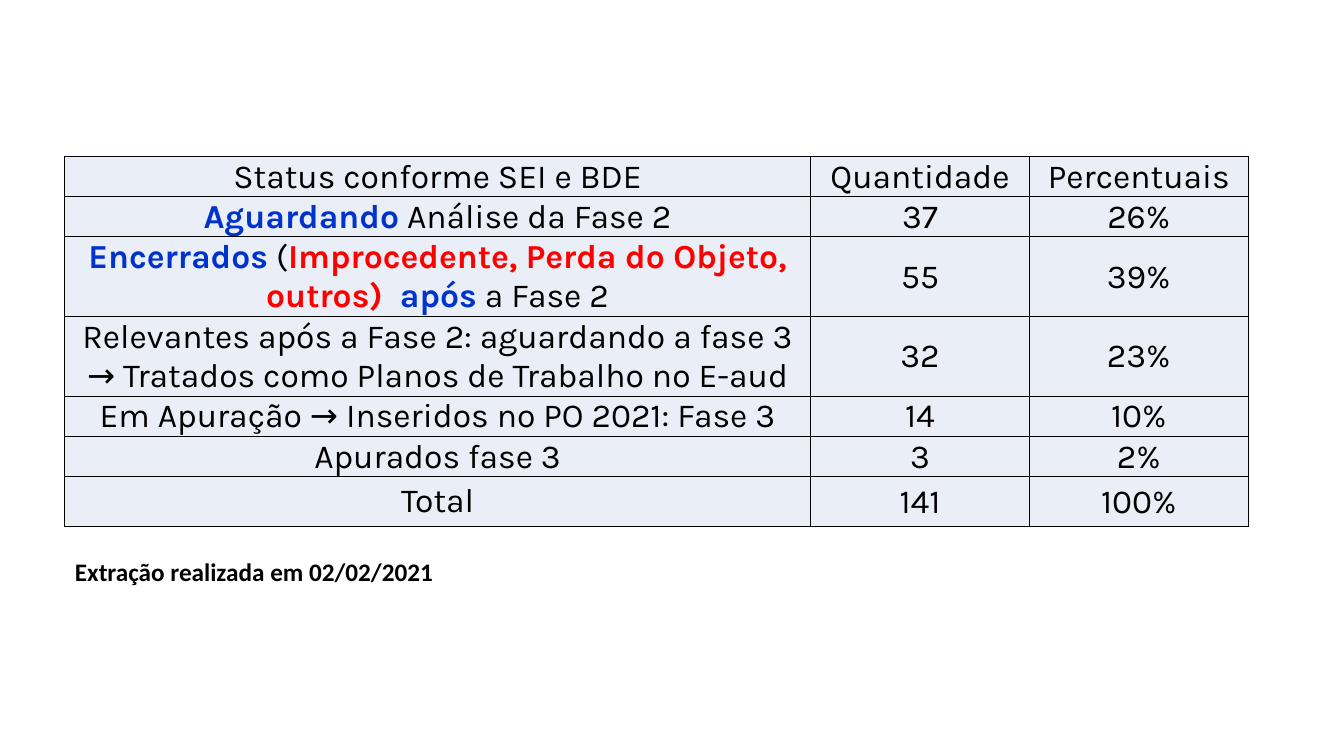
from dataclasses import dataclass

from lxml import etree
from pptx import Presentation
from pptx import util as u
from pptx.dml import color
from pptx.enum import text
from pptx.oxml import ns


@dataclass(frozen=True)
class Theme:
    """Colours, fonts and sizes of the slide."""
    black: str = "000000"
    blue: str = "0033CC"
    red: str = "FF0000"
    cell: str = "EAEFF7"
    table_font: str = "Karla"
    caption_font: str = "Calibri"
    table_size: int = 24
    caption_size: int = 18
    border: float = 1


THEME = Theme()
COLUMN_WIDTHS = (7.4, 2.17, 2.17)
SINGLE, DOUBLE, TOTAL = 0.4, 0.79, 0.49
STATUS_ROWS = (
    (SINGLE, [("Status conforme SEI e BDE", None)], "Quantidade", "Percentuais"),
    (SINGLE, [("Aguardando", THEME.blue), (" Análise da Fase 2", None)], "37", "26%"),
    (DOUBLE, [("Encerrados", THEME.blue), (" (", None),
              ("Improcedente, Perda do Objeto, outros)  ", THEME.red),
              ("após", THEME.blue), (" a Fase 2", None)], "55", "39%"),
    (DOUBLE, [("Relevantes após a Fase 2: aguardando a fase 3 → "
               "Tratados como Planos de Trabalho no E-aud", None)], "32", "23%"),
    (SINGLE, [("Em Apuração → Inseridos no PO 2021: Fase 3", None)], "14", "10%"),
    (SINGLE, [("Apurados fase 3", None)], "3", "2%"),
    (TOTAL, [("Total", None)], "141", "100%"),
)


def add_run(paragraph, words, *, font, size, rgb=THEME.black, bold=False):
    """Add one formatted run to a centred paragraph."""
    paragraph.alignment = text.PP_ALIGN.CENTER
    run = paragraph.add_run()
    run.text = words
    run.font.name = font
    run.font.size = u.Pt(size)
    run.font.bold = bold
    run.font.color.rgb = color.RGBColor.from_string(rgb)


def add_borders(cell):
    """Draw a solid line on all four sides of a cell."""
    properties = cell._tc.get_or_add_tcPr()
    for side in ("lnL", "lnR", "lnT", "lnB"):
        line = etree.SubElement(properties, ns.qn(f"a:{side}"), w=str(u.Pt(THEME.border)))
        fill = etree.SubElement(line, ns.qn("a:solidFill"))
        etree.SubElement(fill, ns.qn("a:srgbClr"), val=THEME.black)


def fill_cell(cell, runs):
    """Style a table cell and write its runs, with accents in bold."""
    add_borders(cell)
    cell.fill.solid()
    cell.fill.fore_color.rgb = color.RGBColor.from_string(THEME.cell)
    cell.vertical_anchor = text.MSO_ANCHOR.MIDDLE
    cell.margin_left = cell.margin_right = cell.margin_top = u.Inches(0.01)
    cell.margin_bottom = 0
    for words, accent in runs:
        add_run(cell.text_frame.paragraphs[0], words, font=THEME.table_font,
                size=THEME.table_size, rgb=accent or THEME.black, bold=bool(accent))


def add_status_table(slide, left, top):
    """Place the status table with its top left corner at the given point."""
    height = sum(row[0] for row in STATUS_ROWS)
    frame = slide.shapes.add_table(
        len(STATUS_ROWS), len(COLUMN_WIDTHS), u.Inches(left), u.Inches(top),
        u.Inches(sum(COLUMN_WIDTHS)), u.Inches(height))
    table = frame.table
    table.first_row = table.horz_banding = False
    for column, width in zip(table.columns, COLUMN_WIDTHS):
        column.width = u.Inches(width)
    for row, (row_height, status, quantity, share) in zip(table.rows, STATUS_ROWS):
        row.height = u.Inches(row_height)
        for cell, runs in zip(row.cells, (status, [(quantity, None)], [(share, None)])):
            fill_cell(cell, runs)
    total_cell = table.cell(len(STATUS_ROWS) - 1, 0)
    total_cell.vertical_anchor = text.MSO_ANCHOR.TOP
    total_cell.margin_top = total_cell.margin_bottom = u.Inches(0.05)


def add_caption(slide, left, top, width, height):
    """Place the extraction date in the given box."""
    box = slide.shapes.add_textbox(*map(u.Inches, (left, top, width, height)))
    box.text_frame.word_wrap = True
    add_run(box.text_frame.paragraphs[0], "Extração realizada em 02/02/2021",
            font=THEME.caption_font, size=THEME.caption_size, bold=True)


def main():
    """Build and save the presentation."""
    presentation = Presentation()
    presentation.slide_width = u.Inches(13.33)
    presentation.slide_height = u.Inches(7.5)
    slide = presentation.slides.add_slide(presentation.slide_layouts[6])
    add_status_table(slide, 0.64, 1.55)
    add_caption(slide, 0.25, 5.47, 4.54, 0.4)
    presentation.save("out.pptx")


if __name__ == "__main__":
    main()
